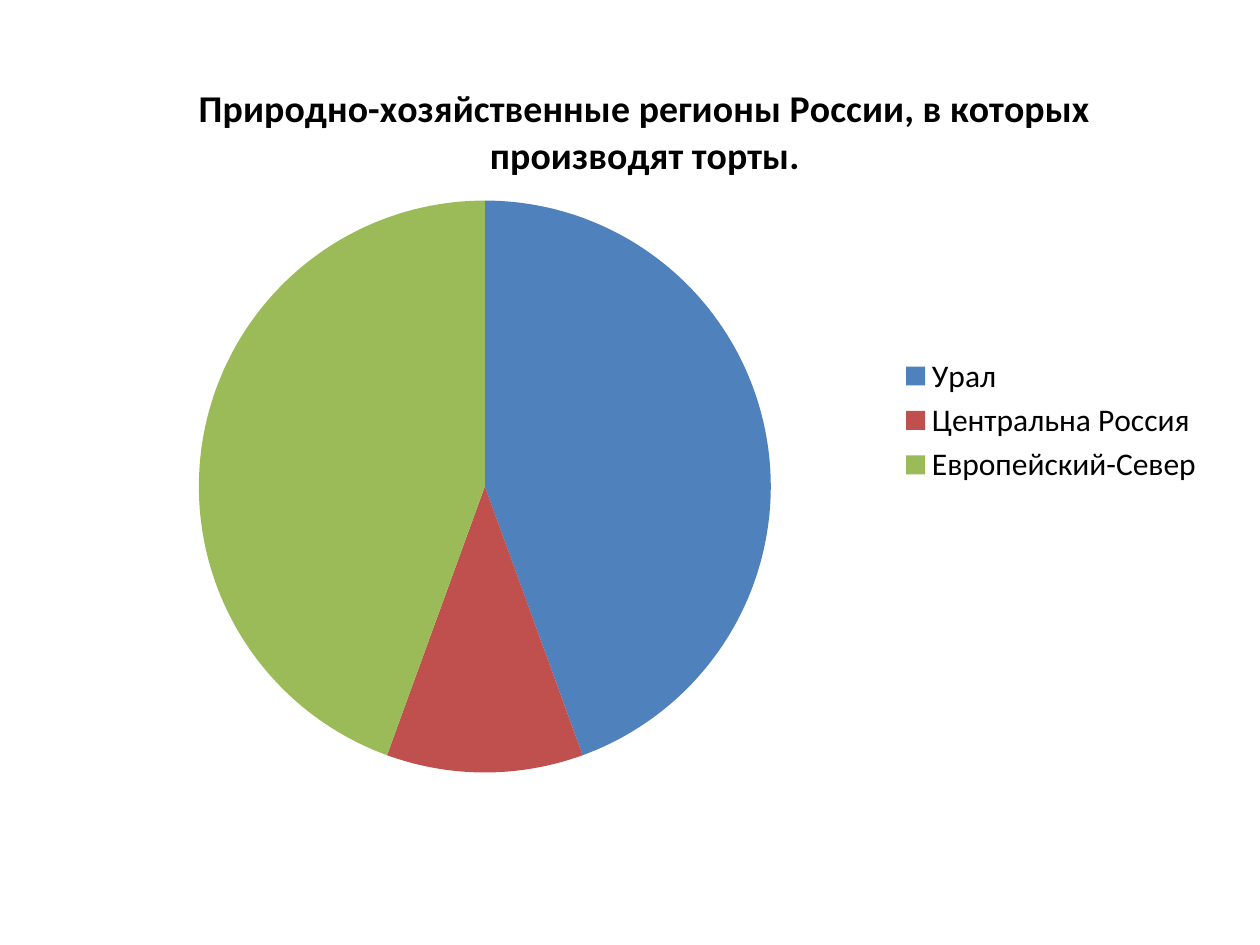
from lxml import etree
from pptx import Presentation
from pptx.chart.data import CategoryChartData
from pptx.dml.color import RGBColor
from pptx.enum.chart import XL_CHART_TYPE, XL_LEGEND_POSITION
from pptx.oxml.ns import qn
from pptx.util import Pt

PIE = XL_CHART_TYPE.PIE
LEGEND_RIGHT = XL_LEGEND_POSITION.RIGHT
EMU_PER_PX = 914400 // 126
BLANK_LAYOUT = 6
COLORS = {
    "text": "000000",
    "background": "FFFFFF",
    "Урал": "4F81BD",
    "Центральна Россия": "C0504D",
    "Европейский-Север": "9BBB59",
}
REGION_SHARES = {"Урал": 44, "Центральна Россия": 11, "Европейский-Север": 44}
HEADING = "Природно-хозяйственные регионы России, в которых производят торты."


def px(length):
    return length * EMU_PER_PX


def color(name):
    return RGBColor.from_string(COLORS[name])


class SlideBuilder:
    """Holds the text style and the current slide."""

    def __init__(self, slide, font_name="Calibri", text_size=18, title_size=21.6):
        self.slide = slide
        self.font_name = font_name
        self.text_size = text_size
        self.title_size = title_size

    def background(self, name):
        fill = self.slide.background.fill
        fill.solid()
        fill.fore_color.rgb = color(name)

    def style_font(self, font, size, bold=False):
        font.name = self.font_name
        font.size = Pt(size)
        font.bold = bold
        font.color.rgb = color("text")

    def pie_chart(self, heading, shares, box, plot_area):
        data = CategoryChartData()
        data.categories = list(shares)
        data.add_series("Series 1", list(shares.values()))
        chart = self.slide.shapes.add_chart(PIE, *map(px, box), data).chart
        self.style_font(chart.font, self.text_size)

        chart.has_title = True
        title_run = chart.chart_title.text_frame.paragraphs[0].add_run()
        title_run.text = heading
        self.style_font(title_run.font, self.title_size, bold=True)

        chart.has_legend = True
        chart.legend.position = LEGEND_RIGHT
        chart.legend.include_in_layout = True
        self.style_font(chart.legend.font, self.text_size)

        pie = chart.plots[0]
        pie.vary_by_categories = True
        for index, region in enumerate(shares):
            fill = pie.series[0].points[index].format.fill
            fill.solid()
            fill.fore_color.rgb = color(region)
        self.place_plot(chart, plot_area)

    def place_plot(self, chart, area):
        """Fix the inner plot area, given as fractions of the chart."""
        plot = chart._chartSpace.find(".//" + qn("c:plotArea"))
        for layout in plot.findall(qn("c:layout")):
            plot.remove(layout)
        layout = etree.Element(qn("c:layout"))
        plot.insert(0, layout)
        manual = etree.SubElement(layout, qn("c:manualLayout"))
        settings = {"layoutTarget": "inner", "xMode": "edge", "yMode": "edge"}
        settings.update(zip("xywh", area))
        for tag, value in settings.items():
            etree.SubElement(manual, qn("c:" + tag)).set("val", str(value))


def main():
    deck = Presentation()
    deck.slide_width, deck.slide_height = px(1260), px(945)
    slide = deck.slides.add_slide(deck.slide_layouts[BLANK_LAYOUT])
    builder = SlideBuilder(slide)
    builder.background("background")
    builder.pie_chart(HEADING, REGION_SHARES, (73, 53, 1144, 735),
                      (0.11, 0.2, 0.5, 0.78))
    deck.save("out.pptx")


if __name__ == "__main__":
    main()
